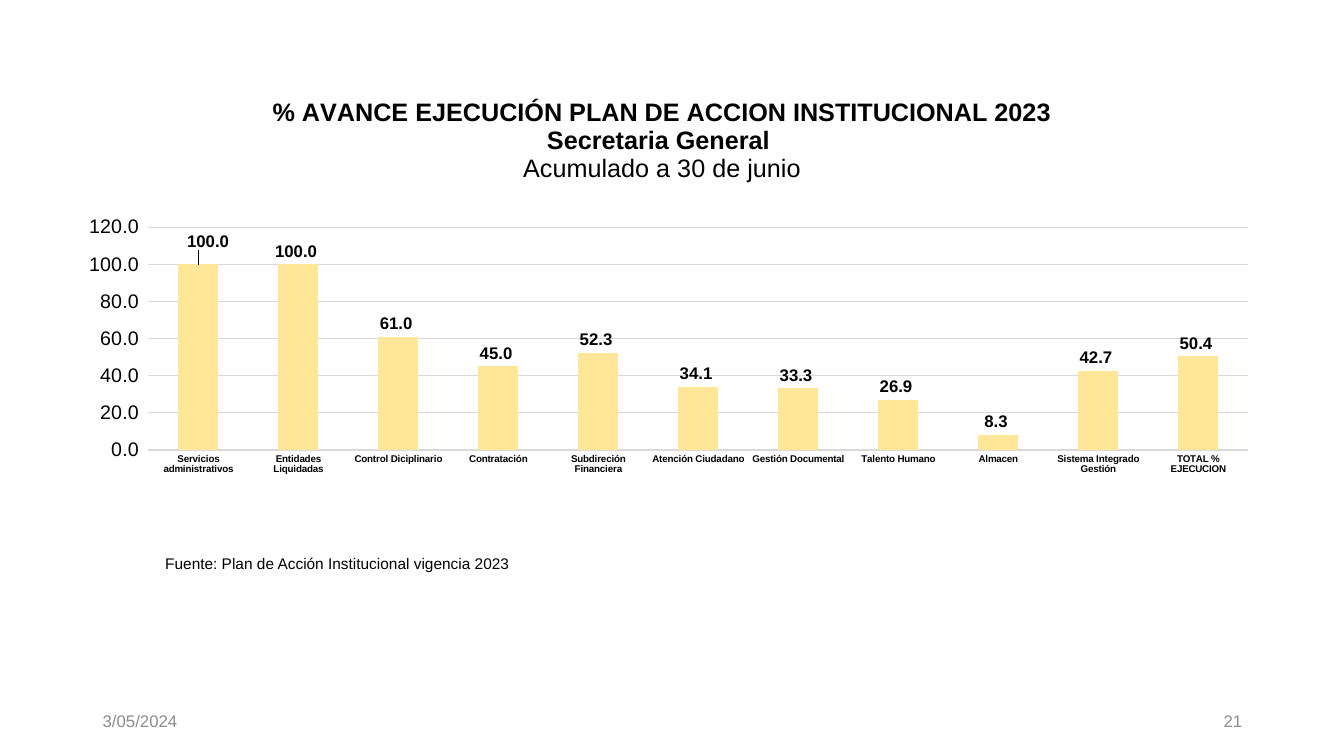
import pptx
import pptx.chart.data
import pptx.dml.color
import pptx.enum.chart
import pptx.enum.text
import pptx.oxml
import pptx.oxml.ns
import pptx.util

Inches = pptx.util.Inches
FONT = "Arial"
NUMBER_FORMAT = "#,##0.0_ ;\\-#,##0.0\\ "
TITLE_LINES = [
    ("% AVANCE EJECUCIÓN PLAN DE ACCION INSTITUCIONAL 2023", True),
    ("Secretaria General ", True),
    ("Acumulado a 30 de junio", False),
]
PROGRESS = {
    "Servicios administrativos": 100,
    "Entidades Liquidadas": 100,
    "Control Diciplinario": 61,
    "Contratación": 45,
    "Subdireción Financiera": 52.3,
    "Atención Ciudadano": 34.1,
    "Gestión Documental": 33.3,
    "Talento Humano": 26.9,
    "Almacen": 8.3,
    "Sistema Integrado Gestión": 42.7,
    "TOTAL % EJECUCION": 50.4,
}


def color(hex_code):
    return pptx.dml.color.RGBColor.from_string(hex_code)


def style_font(font, size, hex_code="000000", bold=False):
    font.name = FONT
    font.size = pptx.util.Pt(size)
    font.bold = bold
    font.color.rgb = color(hex_code)


def chart_xml(content):
    return pptx.oxml.parse_xml(
        f'<c:{content[0]} {pptx.oxml.ns.nsdecls("c")}{content[1]}</c:{content[0]}>')


def manual_layout(x, y, w=None, h=None):
    """Layout in fractions of the chart; with a size it sets the inner plot area."""
    sized = w is not None
    fields = [("layoutTarget", "inner")] if sized else []
    fields += [("xMode", "edge"), ("yMode", "edge")] if sized else []
    fields += [("x", x), ("y", y)]
    fields += [("w", w), ("h", h)] if sized else []
    body = "".join(f'<c:{tag} val="{value}"/>' for tag, value in fields)
    return chart_xml(("layout", f"><c:manualLayout>{body}</c:manualLayout>"))


def add_note(slide, box, text, size, hex_code="000000", align="LEFT", anchor="TOP"):
    note = slide.shapes.add_textbox(*map(Inches, box))
    frame = note.text_frame
    frame.word_wrap = True
    frame.vertical_anchor = getattr(pptx.enum.text.MSO_ANCHOR, anchor)
    paragraph = frame.paragraphs[0]
    paragraph.alignment = getattr(pptx.enum.text.PP_ALIGN, align)
    run = paragraph.add_run()
    run.text = text
    style_font(run.font, size, hex_code)


def add_chart_title(chart):
    chart.has_title = True
    chart.chart_title.include_in_layout = False
    frame = chart.chart_title.text_frame
    for index, (text, bold) in enumerate(TITLE_LINES):
        paragraph = frame.add_paragraph() if index else frame.paragraphs[0]
        paragraph.alignment = pptx.enum.text.PP_ALIGN.CENTER
        run = paragraph.add_run()
        run.text = text
        style_font(run.font, 18, bold=bold)


def style_axes(chart):
    for axis, size, bold in ((chart.category_axis, 7, True), (chart.value_axis, 14, False)):
        axis.major_tick_mark = pptx.enum.chart.XL_TICK_MARK.NONE
        axis.minor_tick_mark = pptx.enum.chart.XL_TICK_MARK.NONE
        axis.format.line.fill.background()
        style_font(axis.tick_labels.font, size, bold=bold)
    values = chart.value_axis
    values.minimum_scale, values.maximum_scale, values.major_unit = 0, 120, 20
    values.tick_labels.number_format = NUMBER_FORMAT
    values.tick_labels.number_format_is_linked = False
    gridline = values.major_gridlines.format.line
    gridline.color.rgb = color("D9D9D9")
    gridline.width = pptx.util.Pt(0.75)


def style_columns(plot):
    plot.gap_width = 150
    plot.vary_by_categories = False
    columns = plot.series[0]
    columns.format.fill.solid()
    columns.format.fill.fore_color.rgb = color("FFE699")

    # Value labels
    above = pptx.enum.chart.XL_LABEL_POSITION.OUTSIDE_END
    labels = columns.data_labels
    labels.show_value = True
    labels.number_format = NUMBER_FORMAT
    labels.number_format_is_linked = False
    labels.position = above
    style_font(labels.font, 12, bold=True)

    # The first label sits a little up and to the right
    first = columns.points[0].data_label
    style_font(first.font, 12, bold=True)
    first.position = above
    index = columns.data_labels._element.find(pptx.oxml.ns.qn("c:dLbl")).find(
        pptx.oxml.ns.qn("c:idx"))
    index.addnext(chart_xml(
        ("numFmt", f' formatCode="{NUMBER_FORMAT}" sourceLinked="0">')))
    index.addnext(manual_layout(0.01, -0.02))


def add_progress_chart(slide, box):
    data = pptx.chart.data.CategoryChartData(number_format=NUMBER_FORMAT)
    data.categories = list(PROGRESS)
    data.add_series("Series 1", list(PROGRESS.values()))
    chart = slide.shapes.add_chart(
        pptx.enum.chart.XL_CHART_TYPE.COLUMN_CLUSTERED, *map(Inches, box), data).chart
    chart.has_legend = False
    style_font(chart.font, 10)
    add_chart_title(chart)
    style_axes(chart)
    style_columns(chart.plots[0])

    # Fixed plot area
    plot_area = chart._chartSpace.chart.plotArea
    for layout in plot_area.findall(pptx.oxml.ns.qn("c:layout")):
        plot_area.remove(layout)
    plot_area.insert(0, manual_layout(0.071, 0.299, 0.919, 0.446))


def add_footer(slide, left, top, width):
    field_width, gray = 3, "8C8C8C"
    add_note(slide, (left, top, field_width, 0.4), "3/05/2024", 12, gray, anchor="MIDDLE")
    add_note(slide, (left + width - field_width, top, field_width, 0.4),
             "21", 12, gray, "RIGHT", "MIDDLE")


def main():
    deck = pptx.Presentation()
    deck.slide_width, deck.slide_height = Inches(13.33), Inches(7.5)
    slide = deck.slides.add_slide(deck.slide_layouts[6])
    add_footer(slide, 0.92, 6.95, 11.5)
    add_note(slide, (1.54, 5.45, 6.65, 0.29),
             "Fuente: Plan de Acción Institucional vigencia 2023", 11)
    add_progress_chart(slide, (0.63, 0.77, 11.87, 4.96))
    deck.save("out.pptx")


if __name__ == "__main__":
    main()
